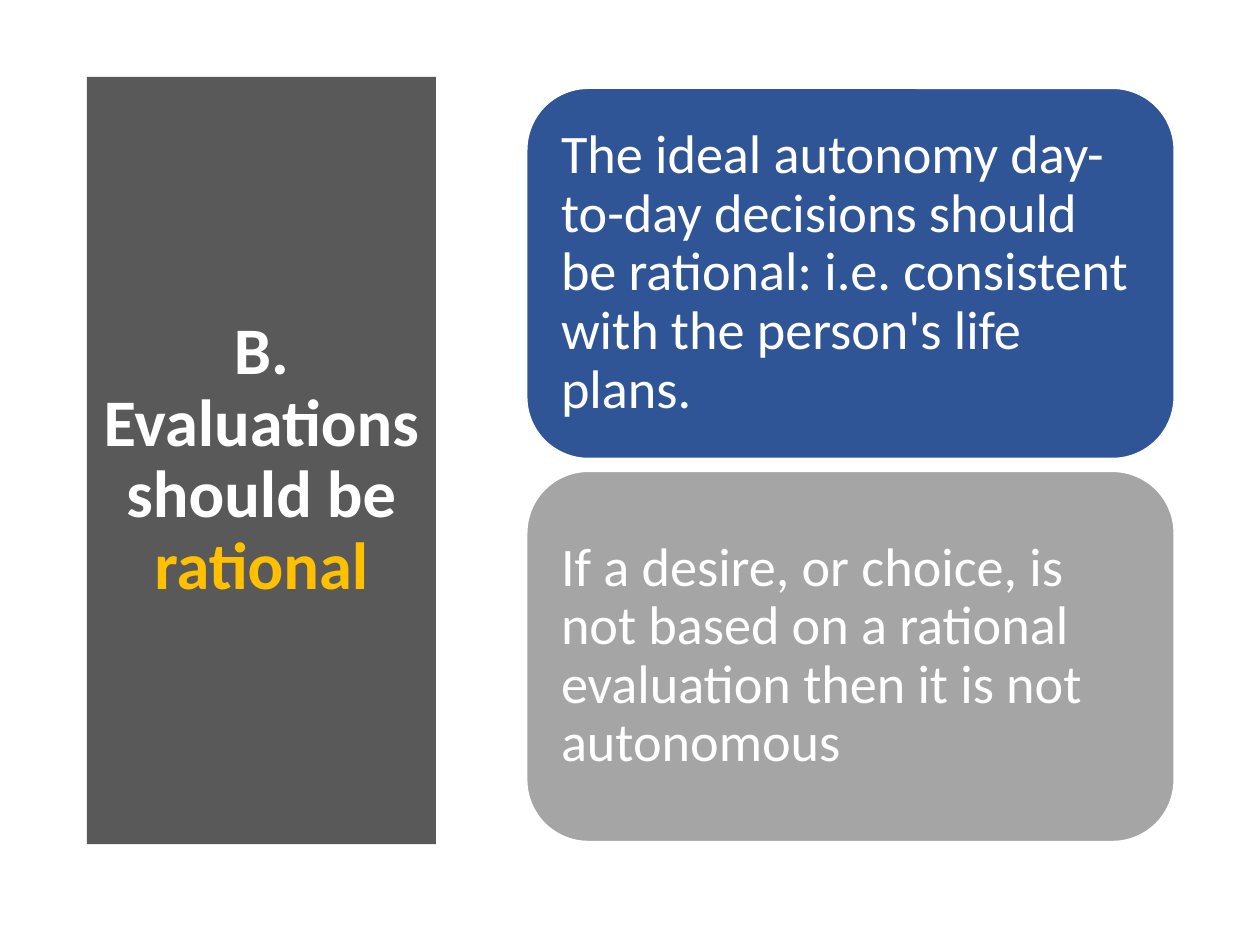
"""Build the slide on rational evaluations: a title panel and two statement cards."""
from pptx import Presentation
from pptx.dml.color import RGBColor
from pptx.enum import shapes, text
from pptx.util import Inches, Pt

WHITE = RGBColor(0xFF, 0xFF, 0xFF)
CHARCOAL = RGBColor(0x59, 0x59, 0x59)
GOLD = RGBColor(0xFF, 0xC0, 0x00)
BLUE = RGBColor(0x2F, 0x55, 0x97)
GRAY = RGBColor(0xA5, 0xA5, 0xA5)
FONT = "Calibri"


def format_paragraph(paragraph, size, alignment):
    paragraph.alignment = alignment
    paragraph.line_spacing = 0.9
    paragraph.font.name = FONT
    paragraph.font.size = Pt(size)
    paragraph.font.color.rgb = WHITE


presentation = Presentation()
presentation.slide_width = Inches(10)
presentation.slide_height = Inches(7.5)
slide = presentation.slides.add_slide(presentation.slide_layouts[5])

title = slide.shapes.title
title.left, title.top = Inches(0.69), Inches(0.61)
title.width, title.height = Inches(2.77), Inches(6.09)
title.fill.solid()
title.fill.fore_color.rgb = CHARCOAL
title.text_frame.word_wrap = True
title.text_frame.auto_size = text.MSO_AUTO_SIZE.NONE
title.text_frame.vertical_anchor = text.MSO_ANCHOR.MIDDLE
heading = title.text_frame.paragraphs[0]
heading.add_run().text = "B. Evaluations should be "
keyword = heading.add_run()
keyword.text = "rational"
format_paragraph(heading, 38, text.PP_ALIGN.CENTER)
heading.font.bold = True
keyword.font.color.rgb = GOLD

cards = [
    (BLUE, "The ideal autonomy day-to-day decisions should be rational: "
           "i.e. consistent with the person's life plans."),
    (GRAY, "If a desire, or choice, is not based on a rational evaluation "
           "then it is not autonomous"),
]
for index, (color, statement) in enumerate(cards):
    card = slide.shapes.add_shape(
        shapes.MSO_SHAPE.ROUNDED_RECTANGLE,
        Inches(4.18), Inches(0.7 + 3.04 * index), Inches(5.14), Inches(2.94))
    card.shadow.inherit = False
    card.fill.solid()
    card.fill.fore_color.rgb = color
    card.line.color.rgb = WHITE
    card.line.width = Pt(1)
    frame = card.text_frame
    frame.word_wrap = True
    frame.vertical_anchor = text.MSO_ANCHOR.MIDDLE
    frame.margin_left = frame.margin_right = Inches(0.13)
    frame.margin_top = frame.margin_bottom = Inches(0.13)
    frame.text = statement
    format_paragraph(frame.paragraphs[0], 31, text.PP_ALIGN.LEFT)

presentation.save("out.pptx")
